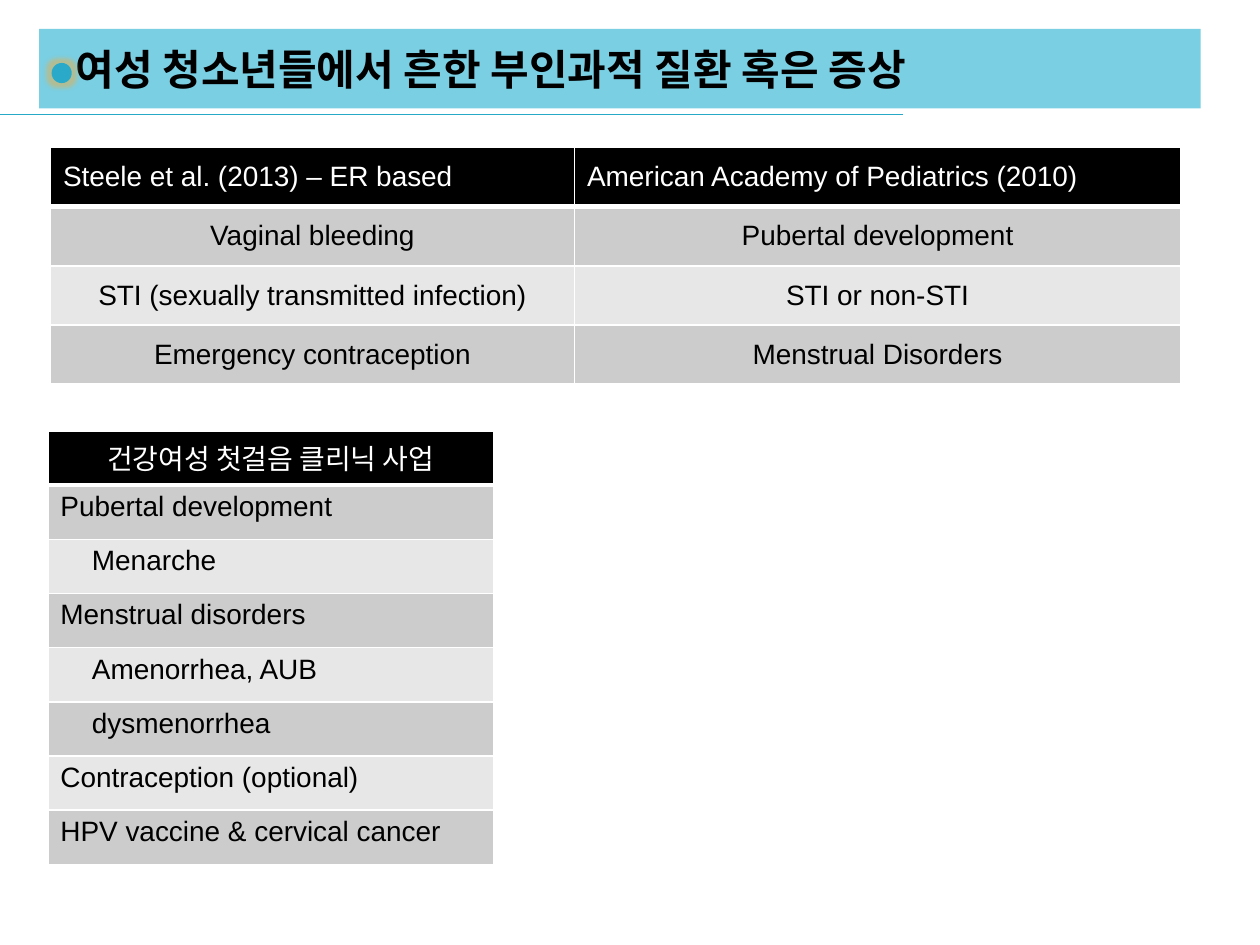
from dataclasses import dataclass

from lxml import etree
from pptx import Presentation
from pptx.dml.color import RGBColor
from pptx.enum.shapes import MSO_CONNECTOR, MSO_SHAPE
from pptx.enum.text import MSO_ANCHOR, PP_ALIGN
from pptx.oxml.ns import qn
from pptx.util import Inches, Pt

LEFT, CENTER = PP_ALIGN.LEFT, PP_ALIGN.CENTER
TOP, MIDDLE = MSO_ANCHOR.TOP, MSO_ANCHOR.MIDDLE
STRAIGHT, OVAL = MSO_CONNECTOR.STRAIGHT, MSO_SHAPE.OVAL

BLACK = RGBColor(0x00, 0x00, 0x00)
WHITE = RGBColor(0xFF, 0xFF, 0xFF)
DARK_BAND = RGBColor(0xCC, 0xCC, 0xCC)
LIGHT_BAND = RGBColor(0xE7, 0xE7, 0xE7)
BANNER = RGBColor(0x7A, 0xCF, 0xE3)
RULE = RGBColor(0x25, 0xA9, 0xC7)
DOT = RGBColor(0x2A, 0xAA, 0xC8)
GLOW = RGBColor(0xD9, 0xB2, 0x5F)
INDENT = Inches(0.25)


@dataclass
class Entry:
    text: str
    indented: bool = False


@dataclass
class Grid:
    left: float
    top: float
    column_widths: list[float]
    row_height: float
    rows: list[list[Entry]]
    header_align: PP_ALIGN
    body_align: PP_ALIGN
    anchor: MSO_ANCHOR


TOPICS = Grid(
    0.4, 1.17, [4.16, 4.81], 0.47,
    [
        [Entry("Steele et al. (2013) – ER based"), Entry("American Academy of Pediatrics (2010)")],
        [Entry("Vaginal bleeding"), Entry("Pubertal development")],
        [Entry("STI (sexually transmitted infection)"), Entry("STI or non-STI")],
        [Entry("Emergency contraception"), Entry("Menstrual Disorders")],
    ],
    LEFT, CENTER, MIDDLE,
)
CLINIC = Grid(
    0.38, 3.42, [3.54], 0.43,
    [
        [Entry("건강여성 첫걸음 클리닉 사업")],
        [Entry("Pubertal development")],
        [Entry("Menarche", True)],
        [Entry("Menstrual disorders")],
        [Entry("Amenorrhea, AUB", True)],
        [Entry("dysmenorrhea", True)],
        [Entry("Contraception (optional)")],
        [Entry("HPV vaccine & cervical cancer")],
    ],
    CENTER, LEFT, TOP,
)


def format_font(font, color: RGBColor, **values) -> None:
    for name, value in values.items():
        setattr(font, name, value)
    font.color.rgb = color


def add_color(parent, color: RGBColor):
    return etree.SubElement(parent, qn("a:srgbClr"), val=str(color))


def set_borders(cell, is_header: bool) -> None:
    properties = cell._tc.get_or_add_tcPr()
    for side in ("L", "R", "T", "B"):
        width = Pt(3) if is_header and side == "B" else Pt(1)
        line = etree.SubElement(properties, qn(f"a:ln{side}"), w=str(width))
        add_color(etree.SubElement(line, qn("a:solidFill")), WHITE)


def fill_cell(cell, entry: Entry, row_index: int, grid: Grid) -> None:
    is_header = row_index == 0
    band = DARK_BAND if row_index % 2 else LIGHT_BAND
    set_borders(cell, is_header)
    cell.fill.solid()
    cell.fill.fore_color.rgb = BLACK if is_header else band
    cell.vertical_anchor = grid.anchor
    para = cell.text_frame.paragraphs[0]
    para.alignment = grid.header_align if is_header else grid.body_align
    if entry.indented:
        para._p.get_or_add_pPr().set("marL", str(INDENT))
    span = para.add_run()
    span.text = entry.text
    format_font(span.font, WHITE if is_header else BLACK, name="Arial", size=Pt(16), bold=False)


def add_grid(page, grid: Grid) -> None:
    frame = page.shapes.add_table(
        len(grid.rows), len(grid.column_widths), Inches(grid.left), Inches(grid.top),
        Inches(sum(grid.column_widths)), Inches(grid.row_height * len(grid.rows)),
    )
    table = frame.table
    for column, width in zip(table.columns, grid.column_widths):
        column.width = Inches(width)
    for row_index, entries in enumerate(grid.rows):
        table.rows[row_index].height = Inches(grid.row_height)
        for column_index, entry in enumerate(entries):
            fill_cell(table.cell(row_index, column_index), entry, row_index, grid)


def add_title(page, text: str) -> None:
    title = page.shapes.title
    place = {"left": 0.31, "top": 0.23, "width": 9.22, "height": 0.63}
    for name, value in place.items():
        setattr(title, name, Inches(value))
    title.fill.solid()
    title.fill.fore_color.rgb = BANNER
    frame = title.text_frame
    frame.margin_left = Inches(0.29)
    frame.vertical_anchor = MIDDLE
    para = frame.paragraphs[0]
    para.alignment = LEFT
    span = para.add_run()
    span.text = text
    format_font(span.font, BLACK, name="Arial", size=Pt(24), bold=True)


def add_rule(page) -> None:
    rule = page.shapes.add_connector(STRAIGHT, 0, Inches(0.91), Inches(7.17), Inches(0.91))
    rule.line.color.rgb = RULE
    rule.line.width = Pt(0.75)
    etree.SubElement(rule._element.spPr, qn("a:effectLst"))


def add_dot(page) -> None:
    dot = page.shapes.add_shape(OVAL, Inches(0.41), Inches(0.5), Inches(0.16), Inches(0.16))
    dot.fill.solid()
    dot.fill.fore_color.rgb = DOT
    dot.line.fill.background()
    dot.shadow.inherit = False
    effects = dot._element.spPr.find(qn("a:effectLst"))
    glow = etree.SubElement(effects, qn("a:glow"), rad=str(Pt(5)))
    etree.SubElement(add_color(glow, GLOW), qn("a:alpha"), val="60000")


def main() -> None:
    deck = Presentation()
    deck.slide_width, deck.slide_height = Inches(10), Inches(7.5)
    page = deck.slides.add_slide(deck.slide_layouts[5])
    add_title(page, "여성 청소년들에서 흔한 부인과적 질환 혹은 증상")
    add_rule(page)
    for grid in (TOPICS, CLINIC):
        add_grid(page, grid)
    add_dot(page)
    deck.save("out.pptx")


if __name__ == "__main__":
    main()
